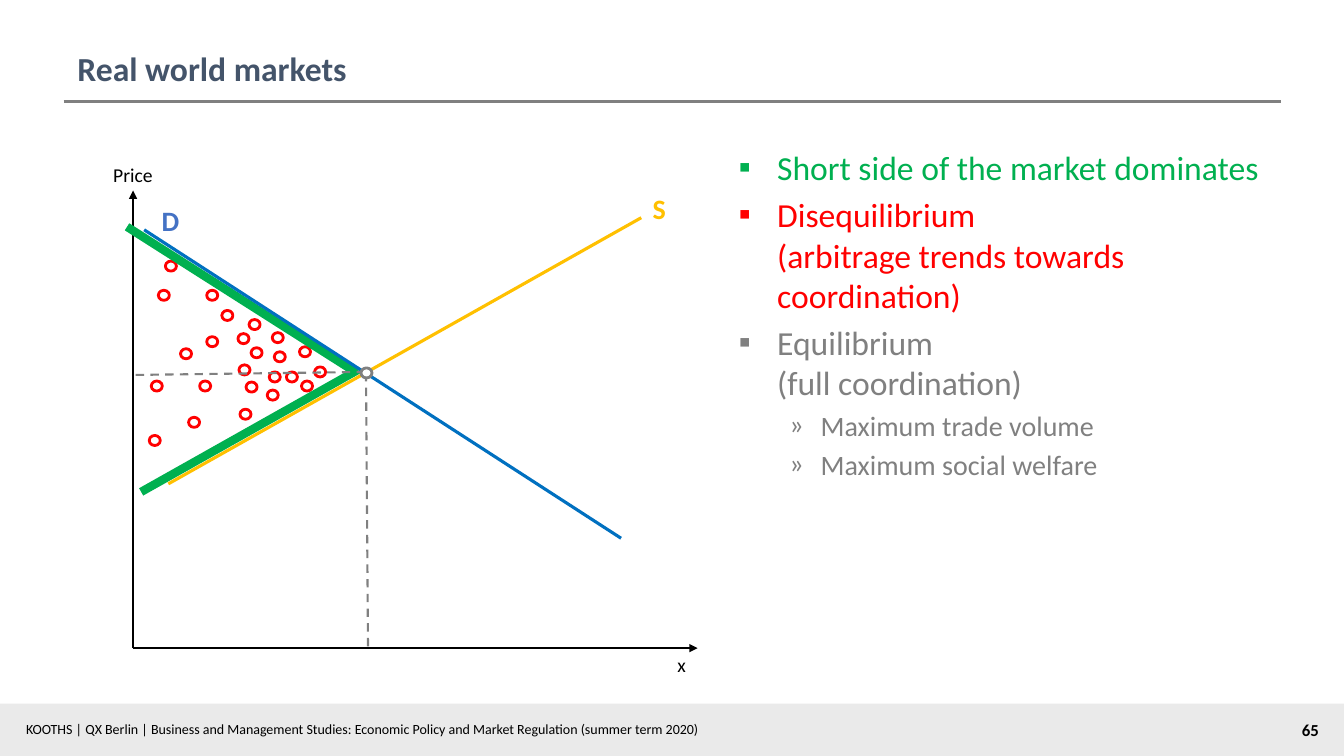
"""Builds the "Real world markets" slide: a supply and demand diagram with key points."""
from dataclasses import dataclass

import lxml.etree
import pptx
import pptx.dml.color
import pptx.enum.dml
import pptx.enum.shapes
import pptx.enum.text
import pptx.oxml.ns
import pptx.util

EMU_PER_PX = 9144
FONT = "Calibri"
BLACK, WHITE, GREY = "000000", "FFFFFF", "808080"
GREEN, RED, BLUE, AMBER = "00B050", "FF0000", "0070C0", "FFC000"
LEFT = pptx.enum.text.PP_ALIGN.LEFT
CENTER = pptx.enum.text.PP_ALIGN.CENTER
RIGHT = pptx.enum.text.PP_ALIGN.RIGHT
TOP = pptx.enum.text.MSO_ANCHOR.TOP
BOTTOM = pptx.enum.text.MSO_ANCHOR.BOTTOM
Box = tuple[int, int, int, int]


@dataclass(frozen=True)
class Label:
    text: str
    box: Box
    size: int
    color: str = BLACK
    bold: bool = False
    align: int = LEFT
    anchor: int = TOP
    wrap: bool = True


@dataclass(frozen=True)
class Stroke:
    start: tuple[int, int]
    end: tuple[int, int]
    color: str
    width: float
    dashed: bool = False
    arrow: bool = False


@dataclass(frozen=True)
class Level:
    bullet: str
    size: int
    margin: int
    hanging: int


@dataclass(frozen=True)
class Point:
    lines: tuple[str, ...]
    color: str
    level: Level


MAIN = Level("▪", 24, 38, 38)
SUB = Level("»", 20, 81, 31)

FOOTER_BAND = (0, 698, 1333, 52)
POINTS_BOX = (723, 141, 558, 531)
TITLE_RULE = Stroke((63, 101), (1271, 101), GREY, 2.25)

FRAME_LABELS = (
    Label("KOOTHS | QX Berlin | Business and Management Studies: "
          "Economic Policy and Market Regulation (summer term 2020)",
          (16, 710, 1017, 27), 10),
    Label("65", (1108, 709, 210, 30), 12, bold=True, align=RIGHT),
    Label("Real world markets", (67, 21, 1200, 71), 24, "44546A", bold=True, anchor=BOTTOM),
)
AXES = (
    Stroke((132, 643), (692, 643), BLACK, 1, arrow=True),
    Stroke((132, 643), (132, 189), BLACK, 1, arrow=True),
)
AXIS_LABELS = (
    Label("Price", (102, 157, 60, 34), 14, align=CENTER, wrap=False),
    Label("x", (482, 643, 208, 34), 14, align=RIGHT),
)
POINTS = (
    Point(("Short side of the market dominates",), GREEN, MAIN),
    Point(("Disequilibrium", "(arbitrage trends towards coordination)"), RED, MAIN),
    Point(("Equilibrium", "(full coordination)"), GREY, MAIN),
    Point(("Maximum trade volume",), GREY, SUB),
    Point(("Maximum social welfare",), GREY, SUB),
)
DISEQUILIBRIA = (
    (157, 288), (164, 259), (272, 349), (205, 288), (247, 317), (299, 378),
    (220, 308), (179, 346), (205, 334), (270, 330), (265, 387), (236, 331),
    (150, 378), (237, 362), (238, 406), (187, 414), (244, 379), (249, 345),
    (297, 344), (284, 369), (267, 369), (312, 364), (148, 432), (198, 378),
)
EQUILIBRIUM = (358, 365)
CURVES = (
    Stroke((126, 225), (354, 370), GREEN, 6),
    Stroke((140, 488), (355, 367), GREEN, 6),
    Stroke((143, 228), (616, 534), BLUE, 2.25),
    Stroke((167, 480), (636, 216), AMBER, 2.25),
    Stroke((363, 370), (365, 643), GREY, 1.5, dashed=True),
    Stroke((362, 369), (133, 372), GREY, 1.5, dashed=True),
)
CURVE_LABELS = (
    Label("S", (637, 185, 34, 44), 20, AMBER, bold=True, align=CENTER, wrap=False),
    Label("D", (150, 197, 38, 44), 20, "4472C4", bold=True, align=CENTER, wrap=False),
)


def px(length: int) -> pptx.util.Emu:
    """Turn px into EMU."""
    return pptx.util.Emu(length * EMU_PER_PX)


def rgb(color: str) -> pptx.dml.color.RGBColor:
    """Turn a hex string into a colour."""
    return pptx.dml.color.RGBColor.from_string(color)


def add_child(parent, tag: str, **attributes: str) -> None:
    """Append a DrawingML element to a parent."""
    child = lxml.etree.SubElement(parent, pptx.oxml.ns.qn(tag))
    for name, value in attributes.items():
        child.set(name, value)


def add_span(para, text: str, size: int, color: str, bold: bool = False) -> None:
    """Add one formatted run to a paragraph."""
    span = para.add_run()
    span.text = text
    span.font.name = FONT
    span.font.size = pptx.util.Pt(size)
    span.font.bold = bold
    span.font.color.rgb = rgb(color)


def draw_label(page, label: Label) -> None:
    """Draw a single-line text box."""
    frame = page.shapes.add_textbox(*map(px, label.box)).text_frame
    frame.word_wrap = label.wrap
    frame.vertical_anchor = label.anchor
    para = frame.paragraphs[0]
    para.alignment = label.align
    add_span(para, label.text, label.size, label.color, label.bold)


def draw_stroke(page, stroke: Stroke) -> None:
    """Draw a straight line, dashed or with an arrowhead if asked."""
    connector = page.shapes.add_connector(
        pptx.enum.shapes.MSO_CONNECTOR.STRAIGHT, *map(px, stroke.start + stroke.end))
    line = connector.line
    line.color.rgb = rgb(stroke.color)
    line.width = pptx.util.Pt(stroke.width)
    if stroke.dashed:
        line.dash_style = pptx.enum.dml.MSO_LINE.DASH
    properties = connector._element.spPr
    if stroke.arrow:
        add_child(properties.find(pptx.oxml.ns.qn("a:ln")), "a:tailEnd", type="triangle")
    add_child(properties, "a:effectLst")


def draw_band(page, box: Box, color: str) -> None:
    """Draw a borderless filled rectangle."""
    band = page.shapes.add_shape(pptx.enum.shapes.MSO_SHAPE.RECTANGLE, *map(px, box))
    band.shadow.inherit = False
    band.fill.solid()
    band.fill.fore_color.rgb = rgb(color)
    band.line.fill.background()


def draw_dot(page, corner: tuple[int, int], color: str) -> None:
    """Draw a small white circle with a coloured outline."""
    dot = page.shapes.add_shape(pptx.enum.shapes.MSO_SHAPE.OVAL, *map(px, corner + (11, 10)))
    dot.shadow.inherit = False
    dot.fill.solid()
    dot.fill.fore_color.rgb = rgb(WHITE)
    dot.line.color.rgb = rgb(color)
    dot.line.width = pptx.util.Pt(2)


def draw_points(page, box: Box, points: tuple[Point, ...]) -> None:
    """Draw the bulleted list."""
    frame = page.shapes.add_textbox(*map(px, box)).text_frame
    frame.word_wrap = True
    for index, point in enumerate(points):
        para = frame.add_paragraph() if index else frame.paragraphs[0]
        level = point.level
        para.level = int(level is SUB)
        para.space_before = pptx.util.Pt(level.size * 0.2)
        properties = para._p.get_or_add_pPr()
        properties.set("marL", str(px(level.margin)))
        properties.set("indent", str(px(-level.hanging)))
        add_child(properties, "a:buFont", typeface=FONT)
        add_child(properties, "a:buChar", char=level.bullet)
        for number, text in enumerate(point.lines):
            if number:
                para.add_line_break()
            add_span(para, text, level.size, point.color)


def main() -> None:
    """Build the slide and save it."""
    deck = pptx.Presentation()
    deck.slide_width, deck.slide_height = px(1333), px(750)
    page = deck.slides.add_slide(deck.slide_layouts[6])
    draw_band(page, FOOTER_BAND, "EAEAEA")
    for stroke in (TITLE_RULE, *AXES):
        draw_stroke(page, stroke)
    for label in FRAME_LABELS + AXIS_LABELS:
        draw_label(page, label)
    draw_points(page, POINTS_BOX, POINTS)
    for corner in DISEQUILIBRIA:
        draw_dot(page, corner, RED)
    for stroke in CURVES:
        draw_stroke(page, stroke)
    for label in CURVE_LABELS:
        draw_label(page, label)
    draw_dot(page, EQUILIBRIUM, GREY)
    deck.save("out.pptx")


if __name__ == "__main__":
    main()
